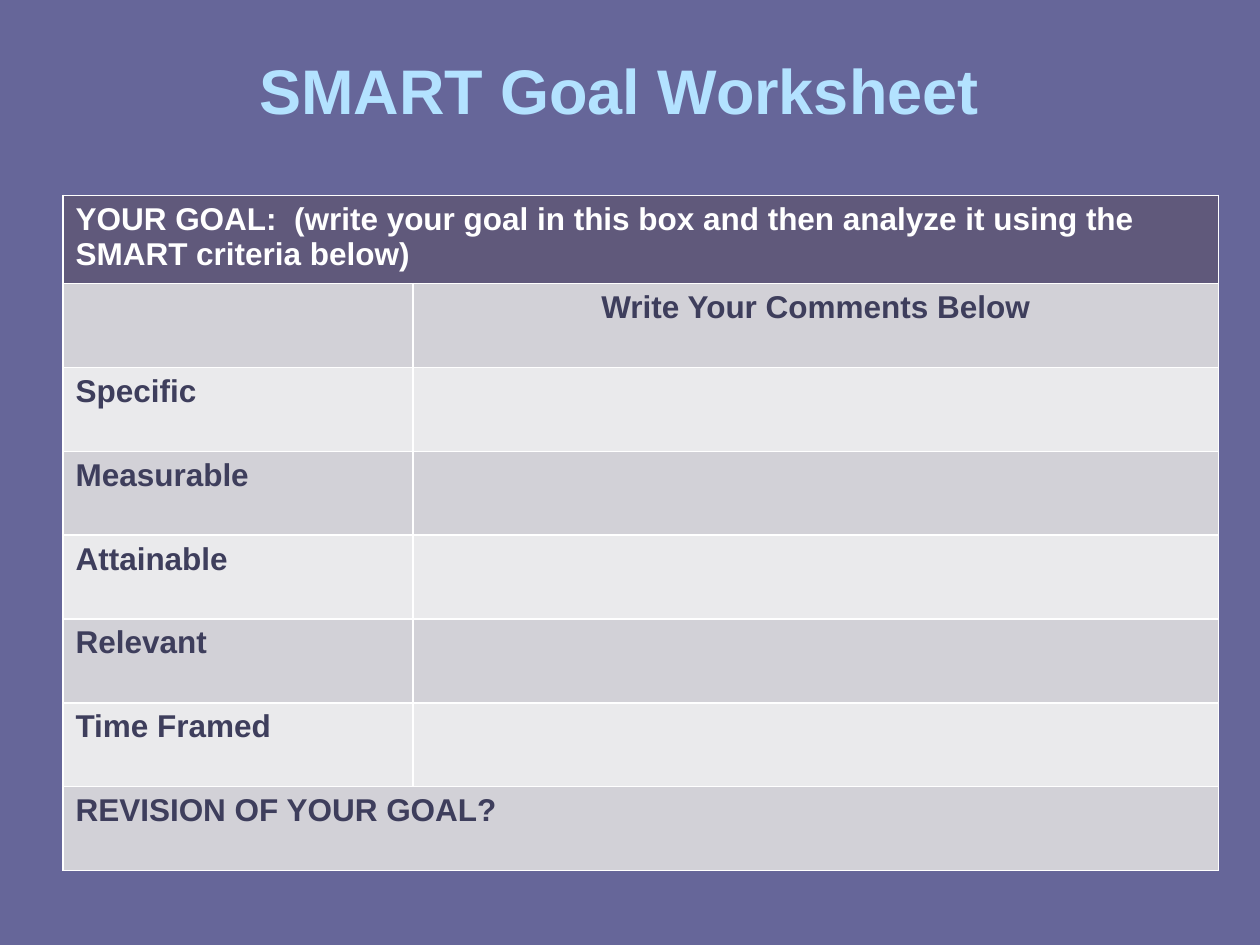
from lxml.etree import SubElement
from pptx import Presentation
from pptx.dml.color import RGBColor
from pptx.enum.text import MSO_ANCHOR, PP_ALIGN
from pptx.oxml.ns import qn
from pptx.util import Cm, Pt

TITLE = "SMART Goal Worksheet"
GOAL = "YOUR GOAL:  (write your goal in this box and then analyze it using the SMART criteria below)"
COMMENTS = "Write Your Comments Below"
CRITERIA = ["Specific", "Measurable", "Attainable", "Relevant", "Time Framed"]
REVISION = "REVISION OF YOUR GOAL?"

ROWS = [(GOAL, ""), ("", COMMENTS), *((name, "") for name in CRITERIA), (REVISION, "")]
MERGED_ROWS = (0, len(ROWS) - 1)
COL_WIDTHS = [Cm(7.06), Cm(16.23)]
ROW_HEIGHT = Cm(1.69)
HEADER_FILL, BANDS = "60597B", ("EAEAEC", "D2D1D7")
WHITE, DARK = "FFFFFF", "3E3E5C"


def color(value):
    return RGBColor.from_string(value)


def write(tf, text, size=18, fill=DARK, align=PP_ALIGN.LEFT):
    p = tf.paragraphs[0]
    p.alignment = align
    r = p.add_run()
    r.text = text
    r.font.name, r.font.size, r.font.bold = "Arial", Pt(size), True
    r.font.color.rgb = color(fill)


def style_cell(cell, fill):
    """Give a cell thin white borders and a solid fill."""
    tc_pr = cell._tc.get_or_add_tcPr()
    for side in ("a:lnL", "a:lnR", "a:lnT", "a:lnB"):
        ln = SubElement(tc_pr, qn(side), w=str(Pt(1)))
        solid = SubElement(ln, qn("a:solidFill"))
        SubElement(solid, qn("a:srgbClr"), val=WHITE)
    cell.fill.solid()
    cell.fill.fore_color.rgb = color(fill)


prs = Presentation()
prs.slide_width, prs.slide_height = Cm(25.4), Cm(19.05)
s = prs.slides.add_slide(prs.slide_layouts[6])
s.background.fill.solid()
s.background.fill.fore_color.rgb = color("666699")

tf = s.shapes.add_textbox(Cm(1.9), Cm(0), Cm(21.16), Cm(3.6)).text_frame
tf.word_wrap = True
tf.vertical_anchor = MSO_ANCHOR.MIDDLE
write(tf, TITLE, size=36, fill="B3E2FF", align=PP_ALIGN.CENTER)

table = s.shapes.add_table(len(ROWS), len(COL_WIDTHS), Cm(1.27), Cm(3.94),
                           sum(COL_WIDTHS), ROW_HEIGHT * len(ROWS)).table
for col, width in zip(table.columns, COL_WIDTHS):
    col.width = width
for i, texts in enumerate(ROWS):
    table.rows[i].height = ROW_HEIGHT
    for j, text in enumerate(texts):
        cell = table.cell(i, j)
        style_cell(cell, BANDS[i % 2] if i else HEADER_FILL)
        if text:
            write(cell.text_frame, text, fill=DARK if i else WHITE,
                  align=PP_ALIGN.CENTER if j else PP_ALIGN.LEFT)
    if i in MERGED_ROWS:
        table.cell(i, 0).merge(table.cell(i, 1))

prs.save("out.pptx")
